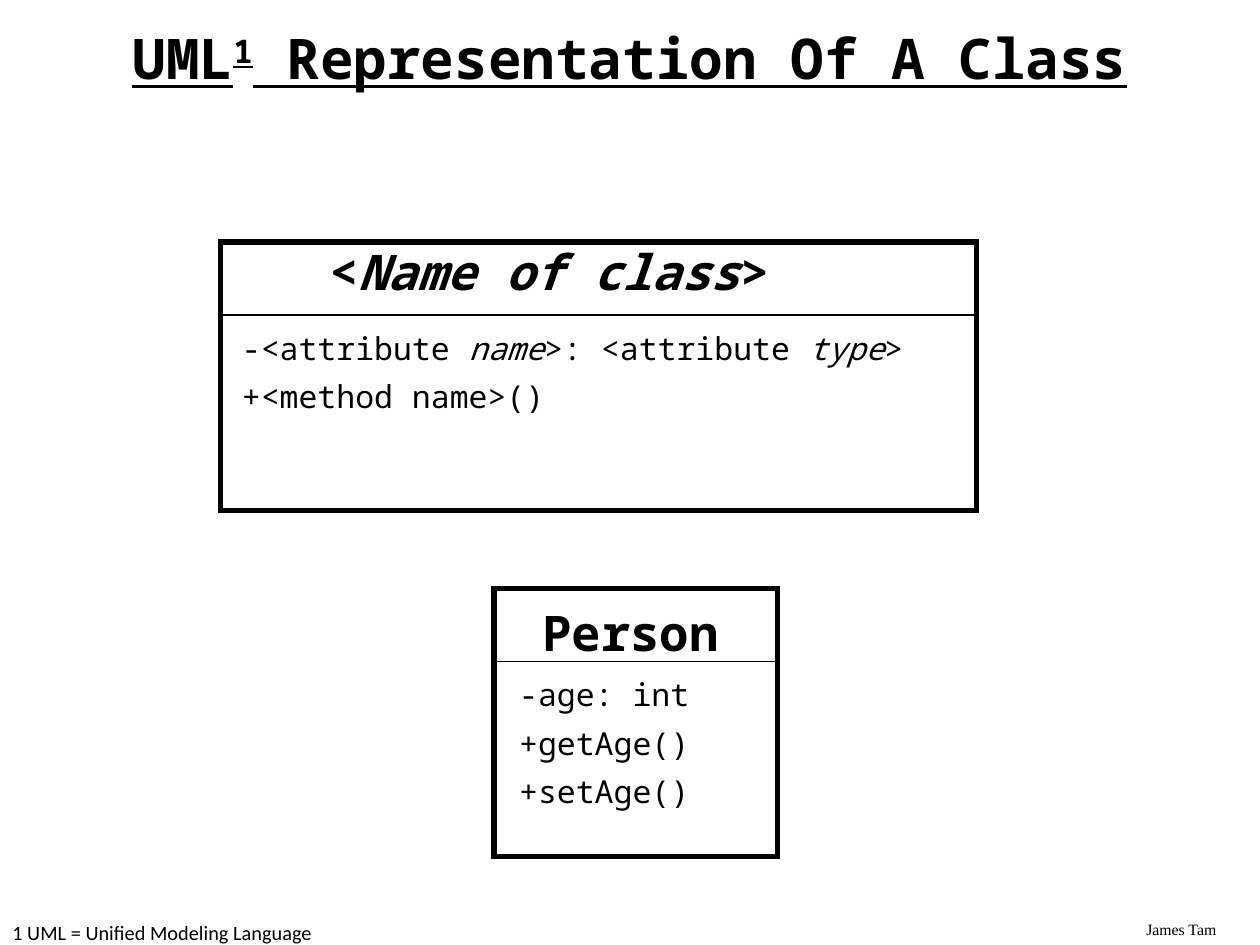
from pptx import Presentation
from pptx.dml.color import RGBColor
from pptx.enum.shapes import MSO_CONNECTOR, MSO_SHAPE
from pptx.enum.text import MSO_ANCHOR, PP_ALIGN
from pptx.oxml.ns import qn
from pptx.util import Inches, Pt
from lxml.etree import SubElement

BLACK = RGBColor(0, 0, 0)
MONO = "Noto Sans Mono"

TITLE = [[("UML", ""), ("1", "sup"), (" Representation Of A Class", "")]]
AUTHOR = [[("James Tam", "")]]
FOOTNOTE = [[("1 UML = Unified Modeling Language", "sup")]]

CLASSES = [
    {
        "box": (1.75, 1.92, 6, 2.13),
        "divider": 2.5,
        "name": [[("<", ""), ("Name of class", "italic"), (">", "")]],
        "name_at": (2.39, 1.89, 3.94, 0.44),
        "members": [
            [("-<attribute ", ""), ("name", "italic"), (">: <attribute ", ""),
             ("type", "italic"), (">", "")],
            [("+<method name>()", "")],
        ],
        "members_at": (1.83, 2.58, 5.83, 1.37),
    },
    {
        "box": (3.92, 4.67, 2.25, 2.13),
        "divider": 5.25,
        "name": [[("Person", "")]],
        "name_at": (4.17, 4.75, 1.67, 0.44),
        "members": [[("-age: int", "")], [("+getAge()", "")], [("+setAge()", "")]],
        "members_at": (4.03, 5.33, 2.08, 1.37),
    },
]


def add_text(s, at, paragraphs, size, font=MONO, bold=False, underline=False,
             align=PP_ALIGN.LEFT, anchor=MSO_ANCHOR.TOP, spacing=1.0,
             inset=(0.1, 0.05)):
    tf = s.shapes.add_textbox(*map(Inches, at)).text_frame
    tf.word_wrap = True
    tf.vertical_anchor = anchor
    tf.margin_left = tf.margin_right = Inches(inset[0])
    tf.margin_top = tf.margin_bottom = Inches(inset[1])
    for i, runs in enumerate(paragraphs):
        p = tf.add_paragraph() if i else tf.paragraphs[0]
        p.alignment = align
        p.line_spacing = spacing
        p.space_before = Pt(6 if i else 0)
        for text, style in runs:
            r = p.add_run()
            r.text = text
            r.font.name = font
            r.font.size = Pt(size)
            r.font.bold = bold
            r.font.underline = underline
            r.font.italic = style == "italic"
            r.font.color.rgb = BLACK
            if style == "sup":
                r.font._element.set("baseline", "30000")


def add_class(s, item):
    left, top, width, height = item["box"]
    y = item["divider"]
    inset = (0.09, 0.03)
    add_text(s, item["name_at"], item["name"], 28, bold=True,
             align=PP_ALIGN.CENTER, inset=inset)

    sp = s.shapes.add_shape(MSO_SHAPE.RECTANGLE, *map(Inches, item["box"]))
    sp.shadow.inherit = False
    sp.fill.background()
    sp.line.color.rgb = BLACK
    sp.line.width = Pt(3)
    SubElement(sp.line._get_or_add_ln(), qn("a:miter"), lim="800000")

    line = s.shapes.add_connector(MSO_CONNECTOR.STRAIGHT, Inches(left), Inches(y),
                                  Inches(left + width), Inches(y))
    line.line.color.rgb = BLACK
    line.line.width = Pt(1)
    SubElement(line._element.spPr, qn("a:effectLst"))

    add_text(s, item["members_at"], item["members"], 18, inset=inset)


def main():
    prs = Presentation()
    prs.slide_width, prs.slide_height = Inches(10), Inches(7.5)
    s = prs.slides.add_slide(prs.slide_layouts[6])
    add_text(s, (9, 7.25, 1, 0.25), AUTHOR, 9, font="Times New Roman")
    add_text(s, (0.75, 0.04, 8.5, 0.9), TITLE, 32, bold=True, underline=True,
             align=PP_ALIGN.CENTER, anchor=MSO_ANCHOR.MIDDLE, spacing=0.9)
    add_text(s, (0, 7.22, 5.43, 0.28), FOOTNOTE, 20, font="Calibri")
    for item in CLASSES:
        add_class(s, item)
    prs.save("out.pptx")


if __name__ == "__main__":
    main()
